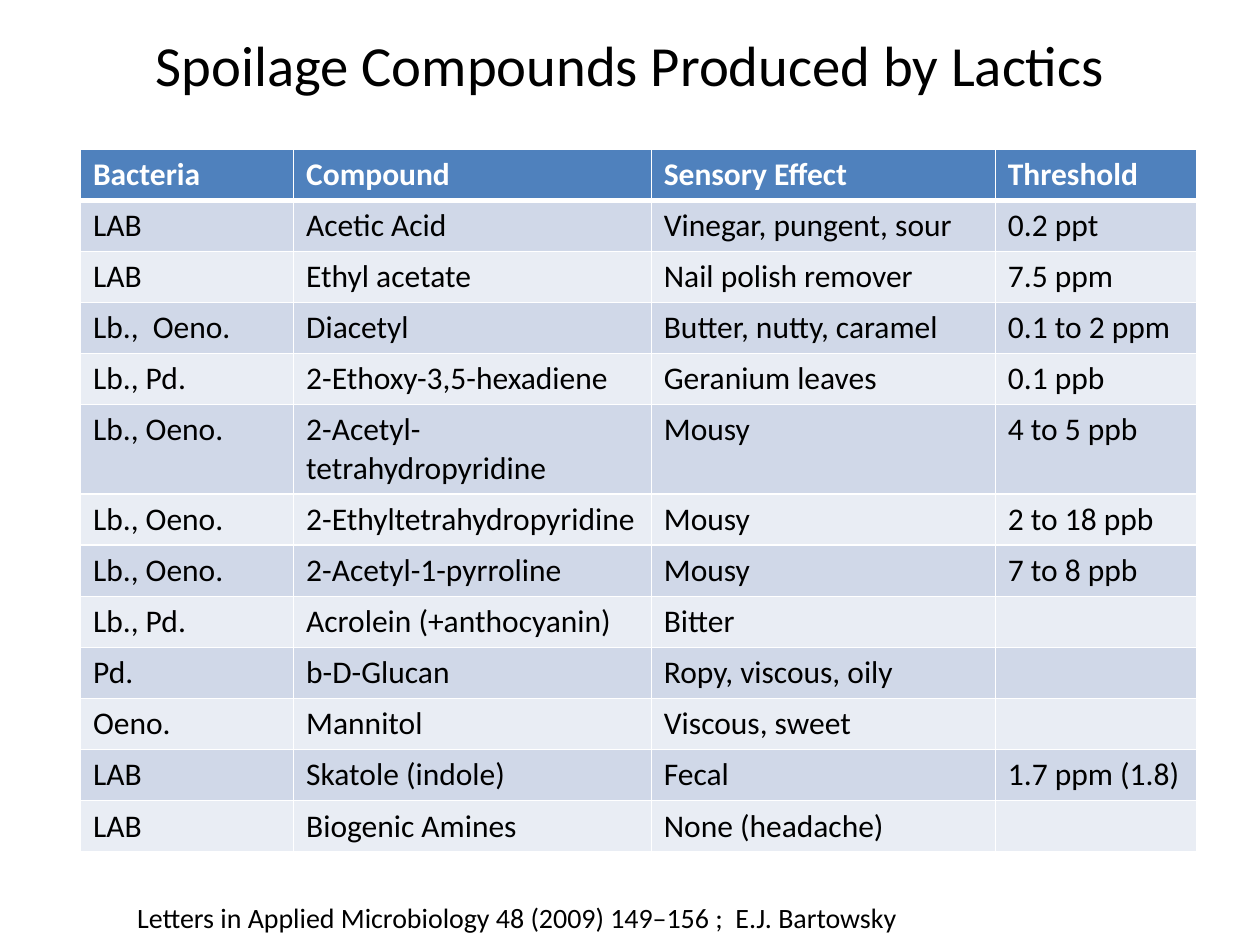
import pptx
import pptx.util
import pptx.dml.color
import pptx.enum.text
import pptx.oxml
import pptx.oxml.ns

Pt = pptx.util.Pt
RGBColor = pptx.dml.color.RGBColor
Align = pptx.enum.text.PP_ALIGN
Anchor = pptx.enum.text.MSO_ANCHOR
Fit = pptx.enum.text.MSO_AUTO_SIZE

BLACK = RGBColor(0x00, 0x00, 0x00)
WHITE = RGBColor(0xFF, 0xFF, 0xFF)
BLUE = RGBColor(0x4F, 0x81, 0xBD)
BANDS = (RGBColor(0xE9, 0xED, 0xF4), RGBColor(0xD0, 0xD8, 0xE8))

ROWS = [
    ("Bacteria", "Compound", "Sensory Effect", "Threshold"),
    ("LAB", "Acetic Acid", "Vinegar, pungent, sour", "0.2 ppt"),
    ("LAB", "Ethyl acetate", "Nail polish remover", "7.5 ppm"),
    ("Lb.,  Oeno.", "Diacetyl", "Butter, nutty, caramel", "0.1 to 2 ppm"),
    ("Lb., Pd.", "2-Ethoxy-3,5-hexadiene", "Geranium leaves", "0.1 ppb"),
    ("Lb., Oeno.", "2-Acetyl-tetrahydropyridine", "Mousy", "4 to 5 ppb"),
    ("Lb., Oeno.", "2-Ethyltetrahydropyridine", "Mousy", "2 to 18 ppb"),
    ("Lb., Oeno.", "2-Acetyl-1-pyrroline", "Mousy", "7 to 8 ppb"),
    ("Lb., Pd.", "Acrolein (+anthocyanin)", "Bitter", ""),
    ("Pd.", "b-D-Glucan", "Ropy, viscous, oily", ""),
    ("Oeno.", "Mannitol", "Viscous, sweet", ""),
    ("LAB", "Skatole (indole)", "Fecal", "1.7 ppm (1.8)"),
    ("LAB", "Biogenic Amines", "None (headache)", ""),
]
WIDTHS = (121.8, 204.4, 196.6, 115.2)
HEIGHT = 29.2


def write(frame, text, size=18, color=BLACK, bold=False, align=None):
    para = frame.paragraphs[0]
    para.alignment = align
    para.font.size = Pt(size)
    if text:
        run = para.add_run()
        run.text = text
        font = run.font
        font.name, font.size, font.bold = "Calibri", Pt(size), bold
        font.color.rgb = color


def edge(cell, **sides):
    """Draw white borders; sides maps L, R, T, B to widths in points."""
    props = cell._tc.get_or_add_tcPr()
    for spot, (side, width) in enumerate(sides.items()):
        props.insert(spot, pptx.oxml.parse_xml(
            f'<a:ln{side} {pptx.oxml.ns.nsdecls("a")} w="{Pt(width)}">'
            f'<a:solidFill><a:srgbClr val="{WHITE}"/></a:solidFill>'
            f'</a:ln{side}>'))


class Page:
    def __init__(self, deck):
        self.slide = deck.slides.add_slide(deck.slide_layouts[5])

    def title(self, text, left, top, width, height):
        shape = self.slide.shapes.title
        shape.left, shape.top = Pt(left), Pt(top)
        shape.width, shape.height = Pt(width), Pt(height)
        frame = shape.text_frame
        frame.auto_size = Fit.NONE
        frame.vertical_anchor = Anchor.MIDDLE
        write(frame, text, size=32.4, align=Align.CENTER)

    def table(self, rows, widths, height, left, top):
        table = self.slide.shapes.add_table(
            len(rows), len(widths), Pt(left), Pt(top),
            Pt(sum(widths)), Pt(height * len(rows))).table
        for col, width in zip(table.columns, widths):
            col.width = Pt(width)
        for r, row in enumerate(rows):
            head = r == 0
            table.rows[r].height = Pt(height)
            for c, text in enumerate(row):
                cell = table.cell(r, c)
                cell.fill.solid()
                cell.fill.fore_color.rgb = BLUE if head else BANDS[r % 2]
                edge(cell, L=1, R=1, T=3 if r == 1 else 1, B=3 if head else 1)
                write(cell.text_frame, text, bold=head,
                      color=WHITE if head else BLACK)

    def note(self, text, left, top, width, height):
        frame = self.slide.shapes.add_textbox(
            Pt(left), Pt(top), Pt(width), Pt(height)).text_frame
        frame.word_wrap = False
        frame.auto_size = Fit.SHAPE_TO_FIT_TEXT
        write(frame, text, size=16)


def main():
    deck = pptx.Presentation()
    deck.slide_width, deck.slide_height = Pt(720), Pt(540)
    page = Page(deck)
    page.title("Spoilage Compounds Produced by Lactics", 36, 13, 648, 47)
    page.table(ROWS, WIDTHS, HEIGHT, 46, 85.2)
    page.note(" Letters in Applied Microbiology 48 (2009) 149–156 ;  E.J. Bartowsky",
              67.7, 511.2, 458, 26.6)
    deck.save("out.pptx")


if __name__ == "__main__":
    main()
